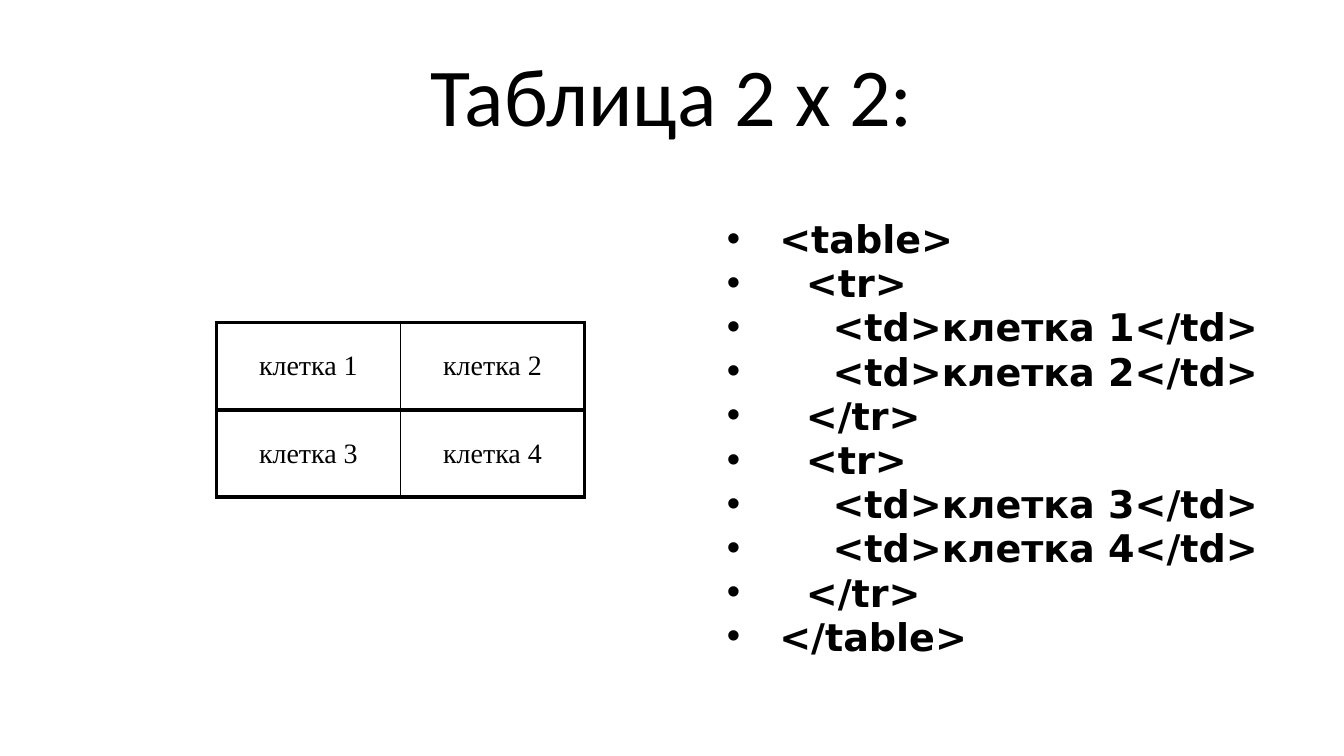
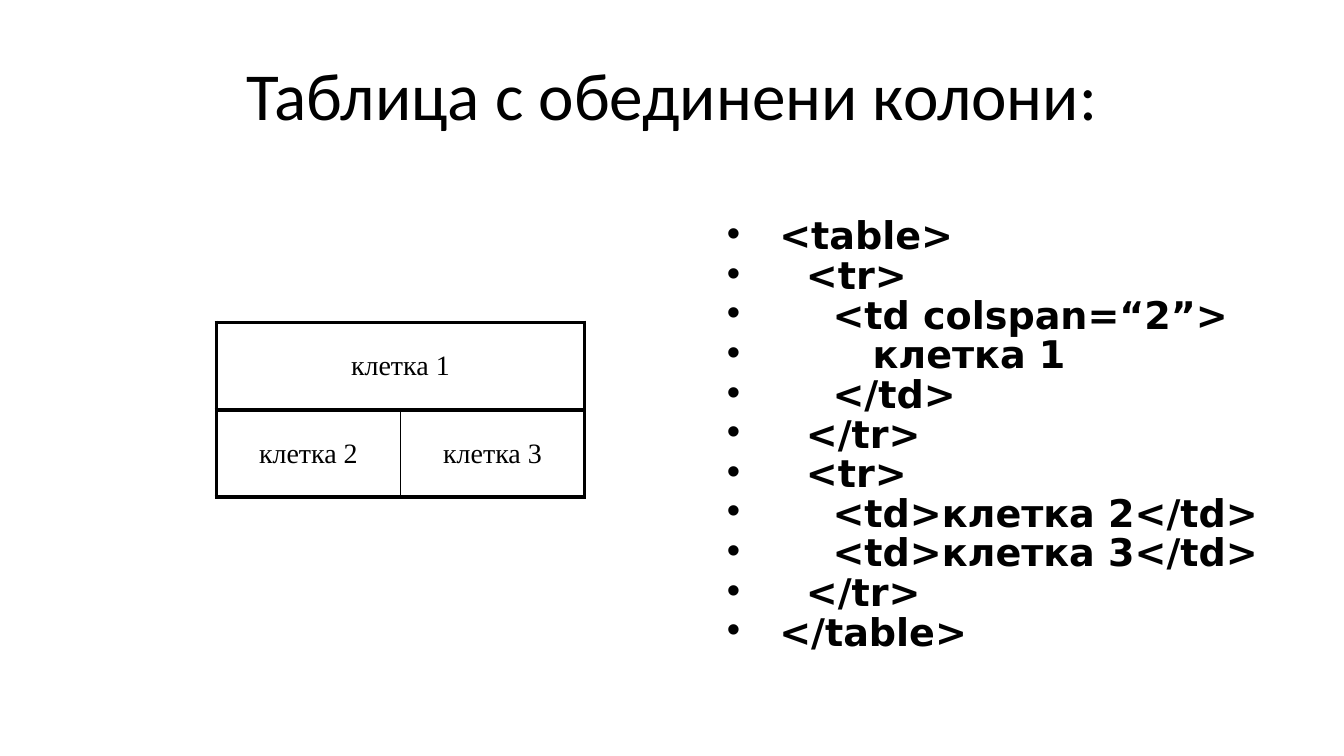
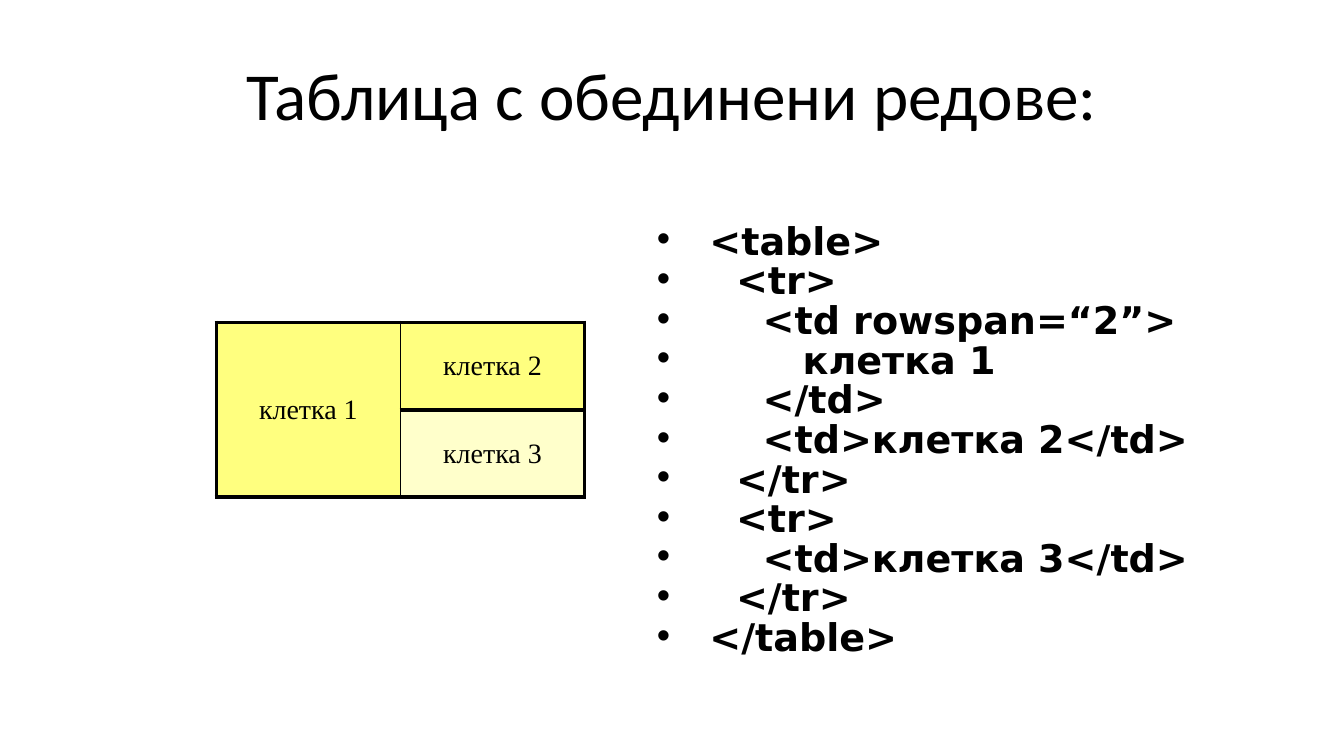
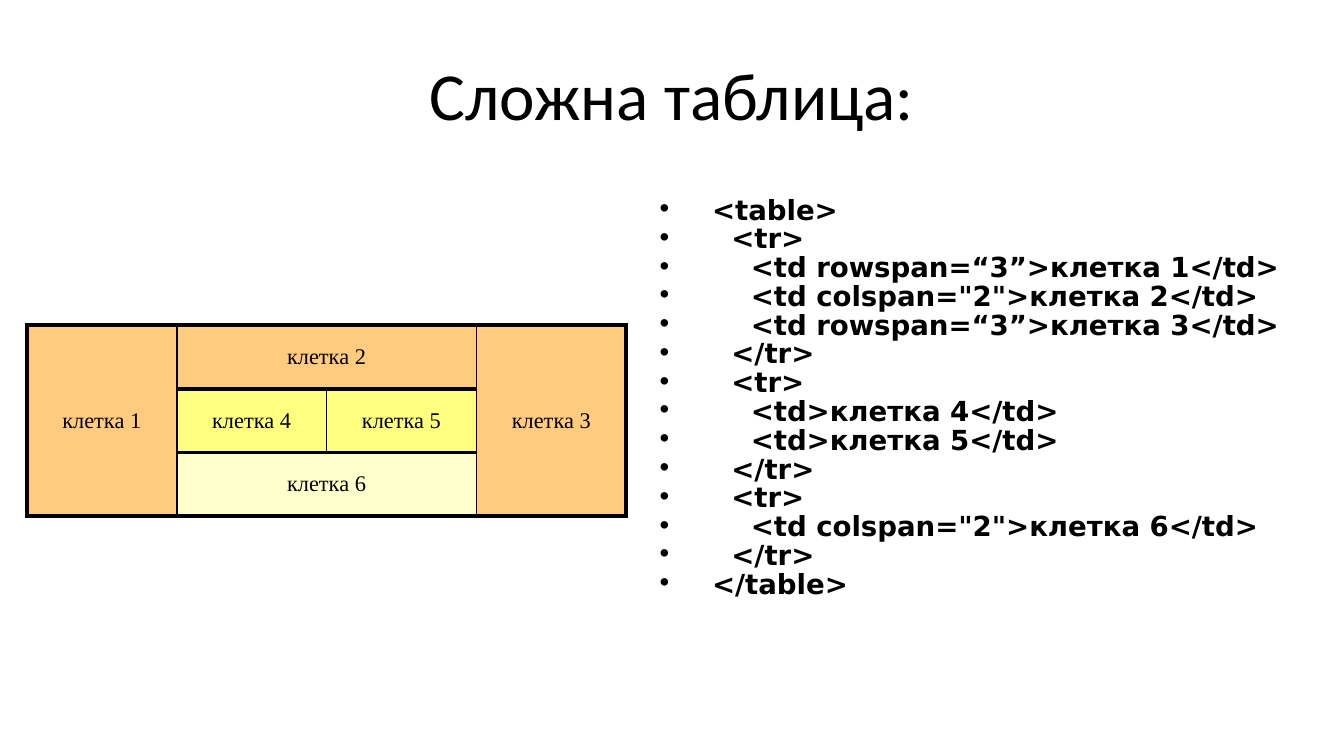
from dataclasses import dataclass

from lxml import etree
from pptx import Presentation
from pptx.dml.color import RGBColor
from pptx.enum.text import MSO_ANCHOR, PP_ALIGN
from pptx.oxml.ns import qn
from pptx.util import Inches, Pt

CENTER = PP_ALIGN.CENTER
TOP = MSO_ANCHOR.TOP
MIDDLE = MSO_ANCHOR.MIDDLE

COLORS = {
    "ink": "000000",
    "yellow": "FFFF00",
    "pale": "FFFF99",
    "orange": "FF9900",
}
TITLE_FONT = "Calibri"
CODE_FONT = "DejaVu Sans"
CELL_FONT = "Times New Roman"
BULLET_INDENT = 0.39
SPACE_WIDTH_EM = 0.35
FILL_OPACITY = 50
THICK = 2.25
THIN = 1


@dataclass(frozen=True)
class Area:
    text: str
    row: int
    column: int
    rows: int = 1
    columns: int = 1
    fill: str = ""


@dataclass(frozen=True)
class Grid:
    left: float
    top: float
    width: float
    height: float
    rows: int
    columns: int
    font_size: float
    areas: tuple[Area, ...]


@dataclass(frozen=True)
class Code:
    left: float
    top: float
    width: float
    height: float
    font_size: float
    line_spacing: float
    space_before: float
    text: str


@dataclass(frozen=True)
class Example:
    title: str
    title_size: float
    grid: Grid
    code: Code


def small_grid(*areas: Area) -> Grid:
    return Grid(1.61, 2.4, 2.74, 1.3, 2, 2, 15, areas)


EXAMPLES = (
    Example(
        "Таблица 2 х 2:",
        44,
        small_grid(
            Area("клетка 1", 0, 0),
            Area("клетка 2", 0, 1),
            Area("клетка 3", 1, 0),
            Area("клетка 4", 1, 1),
        ),
        Code(5.31, 1.62, 4.42, 3.37, 20.4, 0.8, 4.1, """\
<table>
  <tr>
    <td>клетка 1</td>
    <td>клетка 2</td>
  </tr>
  <tr>
    <td>клетка 3</td>
    <td>клетка 4</td>
  </tr>
</table>"""),
    ),
    Example(
        "Таблица с обединени колони:",
        36,
        small_grid(
            Area("клетка 1", 0, 0, columns=2),
            Area("клетка 2", 1, 0),
            Area("клетка 3", 1, 1),
        ),
        Code(5.31, 1.62, 4.42, 3.37, 20.4, 0.7, 4.1, """\
<table>
  <tr>
    <td colspan=“2”>
       клетка 1
    </td>
  </tr>
  <tr>
    <td>клетка 2</td>
    <td>клетка 3</td>
  </tr>
</table>"""),
    ),
    Example(
        "Таблица с обединени редове:",
        36,
        small_grid(
            Area("клетка 1", 0, 0, rows=2, fill="yellow"),
            Area("клетка 2", 0, 1, fill="yellow"),
            Area("клетка 3", 1, 1, fill="pale"),
        ),
        Code(4.79, 1.66, 5.06, 3.37, 20.4, 0.7, 4.1, """\
<table>
  <tr>
    <td rowspan=“2”>
       клетка 1
    </td>
    <td>клетка 2</td>
  </tr>
  <tr>
    <td>клетка 3</td>
  </tr>
</table>"""),
    ),
    Example(
        "Сложна таблица:",
        36,
        Grid(0.2, 2.42, 4.46, 1.42, 3, 4, 12, (
            Area("клетка 1", 0, 0, rows=3, fill="orange"),
            Area("клетка 2", 0, 1, columns=2, fill="orange"),
            Area("клетка 3", 0, 3, rows=3, fill="orange"),
            Area("клетка 4", 1, 1, fill="yellow"),
            Area("клетка 5", 1, 2, fill="yellow"),
            Area("клетка 6", 2, 1, columns=2, fill="pale"),
        )),
        Code(4.81, 1.45, 4.99, 3.67, 14.8, 0.7, 3, """\
<table>
  <tr>
    <td rowspan=“3”>клетка 1</td>
    <td colspan="2">клетка 2</td>
    <td rowspan=“3”>клетка 3</td>
  </tr>
  <tr>
    <td>клетка 4</td>
    <td>клетка 5</td>
  </tr>
  <tr>
    <td colspan="2">клетка 6</td>
  </tr>
</table>"""),
    ),
)


def style_font(paragraph, name: str, size: float, bold: bool = False) -> None:
    font = paragraph.font
    font.name = name
    font.size = Pt(size)
    font.bold = bold
    font.color.rgb = RGBColor.from_string(COLORS["ink"])


def add_text_frame(slide, left: float, top: float, width: float, height: float, anchor):
    box = slide.shapes.add_textbox(Inches(left), Inches(top), Inches(width), Inches(height))
    frame = box.text_frame
    frame.word_wrap = True
    frame.vertical_anchor = anchor
    return frame


def add_title(slide, text: str, size: float) -> None:
    paragraph = add_text_frame(slide, 0.5, 0.23, 9, 0.94, MIDDLE).paragraphs[0]
    paragraph.text = text
    paragraph.alignment = CENTER
    style_font(paragraph, TITLE_FONT, size)


def add_bullet(paragraph, margin: float) -> None:
    properties = paragraph._p.get_or_add_pPr()
    properties.set("marL", str(Inches(margin)))
    properties.set("indent", str(-Inches(margin)))
    color = etree.SubElement(properties, qn("a:buClr"))
    etree.SubElement(color, qn("a:srgbClr"), val=COLORS["ink"])
    etree.SubElement(properties, qn("a:buFont"), typeface="Arial")
    etree.SubElement(properties, qn("a:buChar"), char="•")


def add_code(slide, code: Code) -> None:
    frame = add_text_frame(slide, code.left, code.top, code.width, code.height, TOP)
    space_width = SPACE_WIDTH_EM * code.font_size / 72
    for index, line in enumerate(code.text.splitlines()):
        paragraph = frame.add_paragraph() if index else frame.paragraphs[0]
        text = line.lstrip()
        paragraph.text = text
        add_bullet(paragraph, BULLET_INDENT + (len(line) - len(text)) * space_width)
        paragraph.line_spacing = code.line_spacing
        paragraph.space_before = Pt(code.space_before if index else 0)
        style_font(paragraph, CODE_FONT, code.font_size, bold=True)


def set_borders(cell, left: float, right: float) -> None:
    properties = cell._tc.get_or_add_tcPr()
    widths = {"a:lnL": left, "a:lnR": right, "a:lnT": THICK, "a:lnB": THICK}
    for index, (tag, width) in enumerate(widths.items()):
        line = etree.Element(qn(tag), w=str(Pt(width)))
        fill = etree.SubElement(line, qn("a:solidFill"))
        etree.SubElement(fill, qn("a:srgbClr"), val=COLORS["ink"])
        properties.insert(index, line)


def set_fill(cell, color: str) -> None:
    if not color:
        cell.fill.background()
        return
    cell.fill.solid()
    cell.fill.fore_color.rgb = RGBColor.from_string(COLORS[color])
    value = cell._tc.tcPr.find(qn("a:solidFill")).find(qn("a:srgbClr"))
    etree.SubElement(value, qn("a:alpha"), val=str(FILL_OPACITY * 1000))


def fill_area(table, grid: Grid, area: Area) -> None:
    end_row = area.row + area.rows
    end_column = area.column + area.columns
    origin = table.cell(area.row, area.column)
    if area.rows * area.columns > 1:
        origin.merge(table.cell(end_row - 1, end_column - 1))
    for row in range(area.row, end_row):
        for column in range(area.column, end_column):
            cell = table.cell(row, column)
            set_fill(cell, area.fill)
            set_borders(
                cell,
                left=THIN if area.column else THICK,
                right=THIN if end_column < grid.columns else THICK,
            )
    origin.vertical_anchor = MIDDLE
    origin.margin_top = origin.margin_bottom = Inches(0.04)
    paragraph = origin.text_frame.paragraphs[0]
    paragraph.text = area.text
    paragraph.alignment = CENTER
    style_font(paragraph, CELL_FONT, grid.font_size)


def add_grid(slide, grid: Grid) -> None:
    table = slide.shapes.add_table(
        grid.rows,
        grid.columns,
        Inches(grid.left),
        Inches(grid.top),
        Inches(grid.width),
        Inches(grid.height),
    ).table
    table.first_row = False
    table.horz_banding = False
    for area in grid.areas:
        fill_area(table, grid, area)


def main() -> None:
    presentation = Presentation()
    presentation.slide_width = Inches(10)
    presentation.slide_height = Inches(10 * 9 / 16)
    blank_layout = presentation.slide_layouts[6]
    for example in EXAMPLES:
        slide = presentation.slides.add_slide(blank_layout)
        add_title(slide, example.title, example.title_size)
        add_code(slide, example.code)
        add_grid(slide, example.grid)
    presentation.save("out.pptx")


if __name__ == "__main__":
    main()
